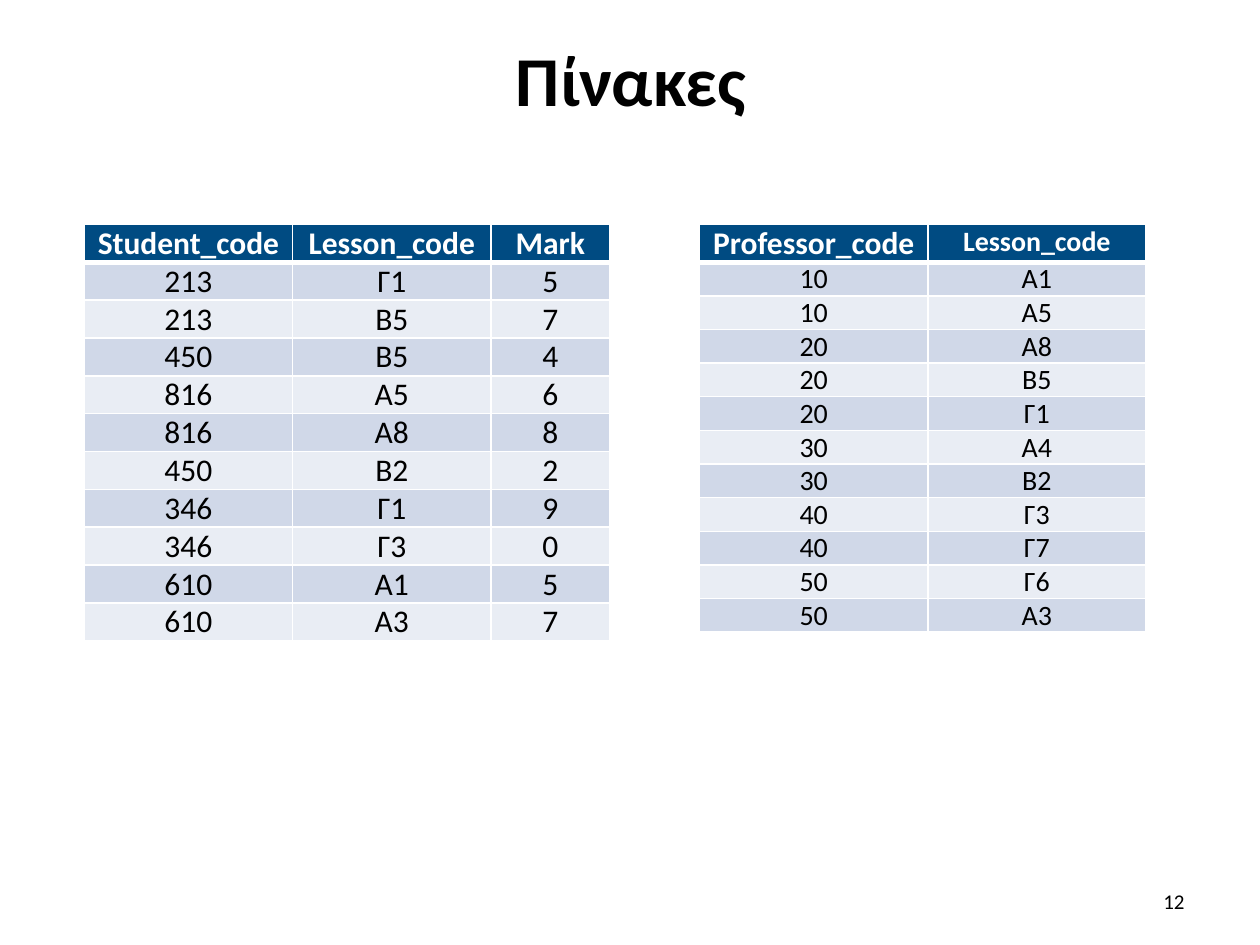
"""Build a slide with two code tables side by side."""
from lxml import etree
from pptx import Presentation
from pptx.dml.color import RGBColor
from pptx.enum import text
from pptx.oxml import ns
from pptx.util import Pt

BLACK = RGBColor(0x00, 0x00, 0x00)
WHITE = RGBColor(0xFF, 0xFF, 0xFF)
NAVY = RGBColor(0x00, 0x4B, 0x82)
BANDS = RGBColor(0xE9, 0xED, 0xF4), RGBColor(0xD0, 0xD8, 0xE8)
FONT = "Calibri"

MARKS = """Student_code Lesson_code Mark
213 Γ1 5
213 Β5 7
450 Β5 4
816 Α5 6
816 Α8 8
450 Β2 2
346 Γ1 9
346 Γ3 0
610 Α1 5
610 Α3 7"""

PROFESSORS = """Professor_code Lesson_code
10 Α1
10 Α5
20 Α8
20 Β5
20 Γ1
30 Α4
30 Β2
40 Γ3
40 Γ7
50 Γ6
50 Α3"""


def style_paragraph(p, size, color, bold, align):
    p.alignment = align
    f = p.font
    f.name, f.size, f.bold = FONT, Pt(size), bold
    f.color.rgb = color


def add_text(s, box, words, size, bold, align):
    tf = s.shapes.add_textbox(*map(Pt, box)).text_frame
    tf.word_wrap = True
    tf.vertical_anchor = text.MSO_ANCHOR.MIDDLE
    tf.text = words
    style_paragraph(tf.paragraphs[0], size, BLACK, bold, align)


def add_borders(cell, top, bottom):
    tc_pr = cell._tc.get_or_add_tcPr()
    for side, width in zip("LRTB", (1, 1, top, bottom)):
        ln = etree.SubElement(tc_pr, ns.qn(f"a:ln{side}"), w=str(Pt(width)))
        fill = etree.SubElement(ln, ns.qn("a:solidFill"))
        etree.SubElement(fill, ns.qn("a:srgbClr"), val=str(WHITE))


def style_cell(cell, row, size):
    header = row == 0
    cell.margin_left = cell.margin_right = Pt(5)
    cell.margin_top = cell.margin_bottom = 0
    add_borders(cell, 3 if row == 1 else 1, 3 if header else 1)
    cell.fill.solid()
    cell.fill.fore_color.rgb = NAVY if header else BANDS[row % 2]
    style_paragraph(cell.text_frame.paragraphs[0], size,
                    WHITE if header else BLACK, header, text.PP_ALIGN.CENTER)


def add_code_table(s, left, widths, data, header_sizes, size, row_height):
    rows = [line.split() for line in data.splitlines()]
    heights = [21.6] + [row_height] * (len(rows) - 1)
    table = s.shapes.add_table(len(rows), len(widths), Pt(left), Pt(128.2),
                               Pt(sum(widths)), Pt(sum(heights))).table
    for column, width in zip(table.columns, widths):
        column.width = Pt(width)
    for i, values in enumerate(rows):
        table.rows[i].height = Pt(heights[i])
        for j, value in enumerate(values):
            cell = table.cell(i, j)
            cell.text = value
            style_cell(cell, i, size if i else header_sizes[j])


def main():
    prs = Presentation()
    prs.slide_width, prs.slide_height = Pt(720), Pt(540)
    s = prs.slides.add_slide(prs.slide_layouts[6])
    add_text(s, (36.7, 9.4, 648, 71.3), "Πίνακες", 40, True, text.PP_ALIGN.CENTER)
    add_code_table(s, 48.2, (119, 113.4, 67.8), MARKS, (18, 18, 18), 18, 21.6)
    add_code_table(s, 399.6, (130.8, 124.2), PROFESSORS, (18, 16), 16, 19.2)
    add_text(s, (516, 500.5, 168, 28.8), "12", 12, False, text.PP_ALIGN.RIGHT)
    prs.save("out.pptx")


if __name__ == "__main__":
    main()
